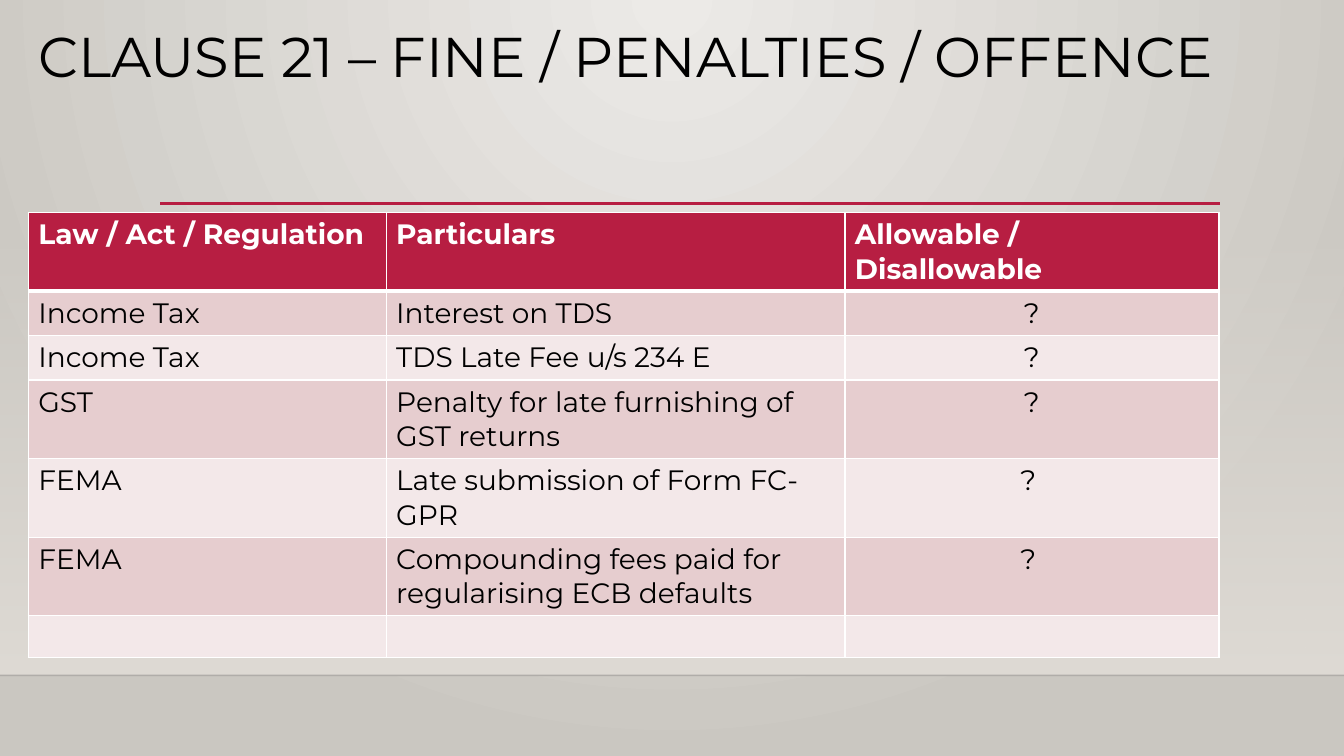
import pptx
import pptx.util
import pptx.dml.color
import pptx.enum.shapes
import pptx.enum.text
import pptx.oxml
import pptx.oxml.ns
from dataclasses import dataclass

Inches, Pt = pptx.util.Inches, pptx.util.Pt
RGB = pptx.dml.color.RGBColor.from_string
Align = pptx.enum.text.PP_ALIGN
qn = pptx.oxml.ns.qn
NS = pptx.oxml.ns.nsdecls("a")


@dataclass(frozen=True)
class Theme:
    font: str = "Montserrat"
    title: int = 40
    body: int = 20
    ink: str = "000000"
    white: str = "FFFFFF"
    red: str = "B71E42"
    bands: tuple = ("E6CDCF", "F3E8E9")
    glow: str = "ECEAE7"
    edge: str = "CAC7C1"
    wall: str = "DFDBD5"
    floor: str = "000001"


THEME = Theme()
HEAD = ("Law / Act / Regulation", "Particulars", "Allowable / Disallowable")
ROWS = (
    ("Income Tax", "Interest on TDS", "?"),
    ("Income Tax", "TDS Late Fee u/s 234 E", "?"),
    ("GST", "Penalty for late furnishing of GST returns", "?"),
    ("FEMA", "Late submission of Form FC-GPR", "? "),
    ("FEMA", "Compounding fees paid for regularising ECB defaults", "? "),
    ("", "", ""),
)
COLS = (3.55, 4.55, 3.71)
ONE, TWO, BLANK = 0.44, 0.78, 0.41
TALL = (TWO, ONE, ONE, TWO, TWO, TWO, BLANK)


def style(item, values):
    for name, value in values.items():
        setattr(item, name, value)


def write(para, text, size, color, bold=False):
    run = para.add_run()
    run.text = text
    style(run.font, {"name": THEME.font, "size": Pt(size), "bold": bold})
    run.font.color.rgb = RGB(color)


def blend(fill, colors):
    fill.gradient()
    for stop, color, place in zip(fill.gradient_stops, colors, (0, 1)):
        stop.color.rgb = RGB(color)
        stop.position = place


def fade(node, share):
    color = next(node.iter(qn("a:srgbClr")))
    color.append(pptx.oxml.parse_xml(f'<a:alpha {NS} val="{share * 1000}"/>'))


def rule(slide, left, top, width, color, weight):
    line = slide.shapes.add_connector(
        pptx.enum.shapes.MSO_CONNECTOR.STRAIGHT,
        Inches(left), Inches(top), Inches(left + width), Inches(top))
    line.line.color.rgb = RGB(color)
    line.line.width = Pt(weight)
    line.element.spPr.append(pptx.oxml.parse_xml(f"<a:effectLst {NS}/>"))
    return line


def border(cell, low):
    # Cell borders must come before the cell fill
    props = cell._tc.get_or_add_tcPr()
    sides = {"lnL": 1, "lnR": 1, "lnT": 1, "lnB": low}
    for spot, (side, weight) in enumerate(sides.items()):
        props.insert(spot, pptx.oxml.parse_xml(
            f'<a:{side} {NS} w="{Pt(weight)}"><a:solidFill>'
            f'<a:srgbClr val="{THEME.white}"/></a:solidFill></a:{side}>'))


def draw_room(slide, left, top, width, height):
    # Radial glow centred on the top edge
    blend(slide.background.fill, (THEME.glow, THEME.edge))
    grad = next(slide.element.iter(qn("a:gradFill")))
    grad.replace(grad.find(qn("a:lin")), pptx.oxml.parse_xml(
        f'<a:path {NS} path="circle">'
        '<a:fillToRect l="43000" r="43000" b="100000"/></a:path>'))

    # Wall that fades in downwards, and the floor line
    wall = slide.shapes.add_shape(
        pptx.enum.shapes.MSO_SHAPE.RECTANGLE,
        Inches(left), Inches(top), Inches(width), Inches(height))
    wall.shadow.inherit = False
    wall.line.fill.background()
    blend(wall.fill, (THEME.wall, THEME.wall))
    wall.fill.gradient_angle = 270
    fade(wall.element.spPr, 0)
    floor = rule(slide, left, top + height, width, THEME.floor, 1)
    fade(floor.element.spPr, 20)


def draw_title(slide, left, top, width, height):
    box = slide.shapes.add_textbox(
        Inches(left), Inches(top), Inches(width), Inches(height))
    style(box.text_frame, {"word_wrap": True,
                           "vertical_anchor": pptx.enum.text.MSO_ANCHOR.TOP})
    para = box.text_frame.paragraphs[0]
    para.line_spacing = 0.9
    write(para, "CLAUSE 21 – FINE / PENALTIES / OFFENCE",
          THEME.title, THEME.ink)


def draw_table(slide, left, top):
    table = slide.shapes.add_table(
        len(TALL), len(COLS), Inches(left), Inches(top),
        Inches(sum(COLS)), Inches(sum(TALL))).table
    for col, width in zip(table.columns, COLS):
        col.width = Inches(width)
    for row, height in zip(table.rows, TALL):
        row.height = Inches(height)

    # Header, then banded rows
    for r, texts in enumerate((HEAD,) + ROWS):
        head = r == 0
        back = THEME.red if head else THEME.bands[(r - 1) % 2]
        for c, text in enumerate(texts):
            cell = table.cell(r, c)
            cell.fill.solid()
            cell.fill.fore_color.rgb = RGB(back)
            border(cell, 3 if head else 1)
            para = cell.text_frame.paragraphs[0]
            if text:
                write(para, text, THEME.body,
                      THEME.white if head else THEME.ink, head)
            if c == 2 and not head:
                para.alignment = Align.CENTER


def main():
    deck = pptx.Presentation()
    style(deck, {"slide_width": Inches(13.33), "slide_height": Inches(7.5)})
    slide = deck.slides.add_slide(deck.slide_layouts[6])
    draw_room(slide, 0, 2.21, 13.33, 4.49)
    rule(slide, 1.59, 2.02, 10.51, THEME.red, 2.5)
    draw_title(slide, 0.28, 0.24, 12.6, 1.31)
    draw_table(slide, 0.28, 2.11)
    deck.save("out.pptx")


if __name__ == "__main__":
    main()
